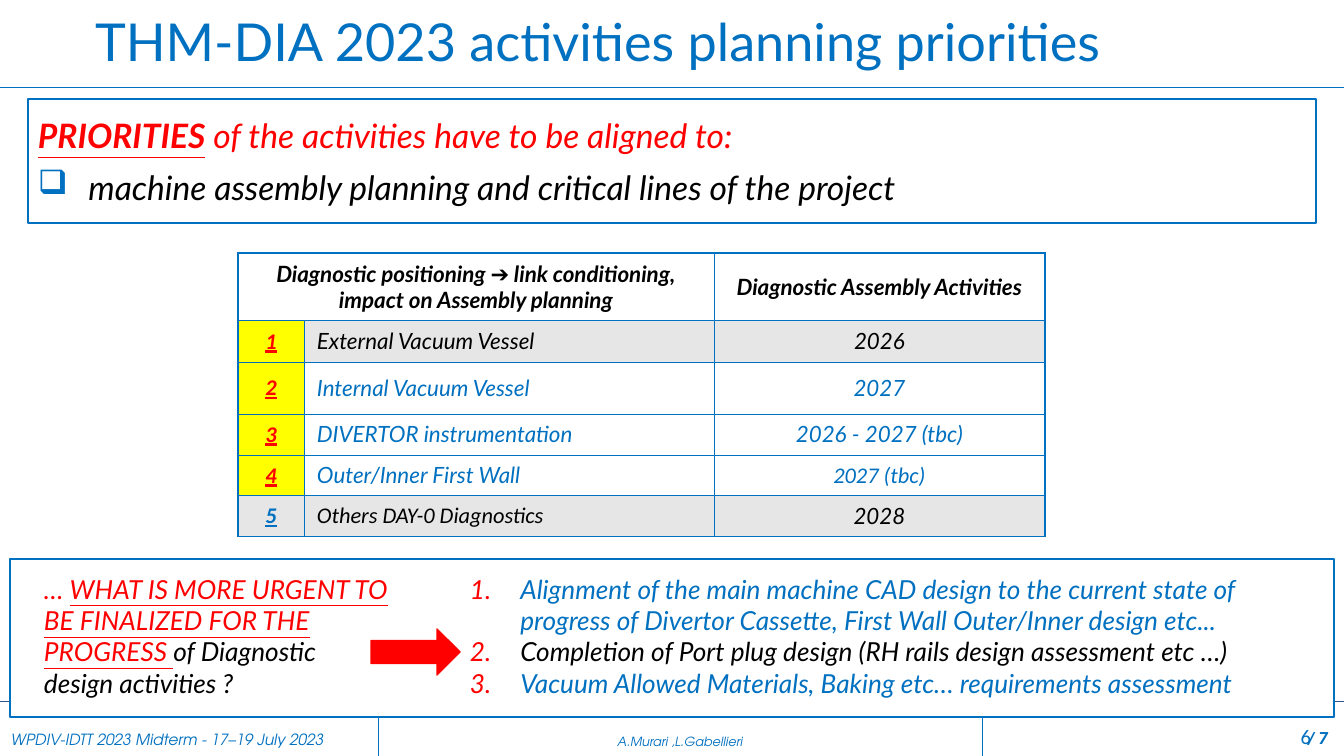
"""Build the slide on activities planning priorities."""
import pptx
import pptx.dml.color
import pptx.enum.shapes
import pptx.enum.text
import pptx.oxml.ns
import pptx.util
from lxml import etree

ALIGN = pptx.enum.text.PP_ALIGN
ANCHOR = pptx.enum.text.MSO_ANCHOR
SHAPE = pptx.enum.shapes.MSO_SHAPE


class Theme:
    blue, navy, red, black = "0070C0", "2F5597", "FF0000", "000000"
    white, grey, yellow = "FFFFFF", "E7E6E6", "FFFF00"
    main, digits, footer, total = "Lato", "Calibri", "TeX Gyre Adventor", "Roboto"
    title_size, lead_size, body_size, table_size = 37.3, 24, 18.7, 16
    number_size, total_size, footer_size, author_size = 14.7, 12, 11, 9
    thin, rule, thick = 0.25, 0.5, 1


def px(value):
    return pptx.util.Emu(round(value * 914400 / 100.8))


def rgb(value):
    return pptx.dml.color.RGBColor.from_string(value)


def style(size, color, name=Theme.main, **extra):
    return {"size": pptx.util.Pt(size), "name": name, "color": color, **extra}


def add_node(parent, tag, **attributes):
    return etree.SubElement(parent, pptx.oxml.ns.qn("a:" + tag), attributes)


def apply(target, values):
    for key, value in values.items():
        if key == "color":
            target.color.rgb = rgb(value)
        else:
            setattr(target, key, value)


class SlideBuilder:
    def __init__(self, slide, theme):
        self.slide, self.theme = slide, theme

    def fill_text(self, frame, paragraphs):
        for index, (runs, options) in enumerate(paragraphs):
            paragraph = frame.add_paragraph() if index else frame.paragraphs[0]
            options = {"alignment": ALIGN.LEFT, **options}
            bullet = options.pop("bullet", None)
            if bullet:
                self.bullet(paragraph, *bullet)
            apply(paragraph, options)
            for text, font_values in runs:
                run = paragraph.add_run()
                run.text = text
                apply(run.font, font_values)

    def bullet(self, paragraph, color, tag, attributes):
        properties = paragraph._p.get_or_add_pPr()
        indent = pptx.util.Inches(0.5)
        properties.set("marL", str(indent))
        properties.set("indent", str(-indent))
        add_node(add_node(properties, "buClr"), "srgbClr", val=color)
        add_node(properties, tag, **attributes)

    def title(self, box, paragraphs):
        shape = self.slide.shapes.title
        apply(shape, dict(zip(("left", "top", "width", "height"), map(px, box))))
        apply(shape.text_frame, {"auto_size": pptx.enum.text.MSO_AUTO_SIZE.NONE,
                                 "vertical_anchor": ANCHOR.MIDDLE})
        self.fill_text(shape.text_frame, paragraphs)

    def line(self, y, color):
        connector = self.slide.shapes.add_connector(
            pptx.enum.shapes.MSO_CONNECTOR.STRAIGHT, 0, px(y), px(1344), px(y))
        apply(connector.line, {"color": color, "width": pptx.util.Pt(self.theme.rule)})
        add_node(connector._element.spPr, "effectLst")

    def text(self, box, paragraphs):
        frame = self.slide.shapes.add_textbox(*map(px, box)).text_frame
        frame.word_wrap = True
        self.fill_text(frame, paragraphs)

    def shape(self, kind, box, fill, line=None, paragraphs=(), anchor=ANCHOR.TOP):
        shape = self.slide.shapes.add_shape(kind, *map(px, box))
        shape.shadow.inherit = False
        shape.fill.solid()
        shape.fill.fore_color.rgb = rgb(fill)
        if line:
            apply(shape.line, {"color": line, "width": pptx.util.Pt(self.theme.thick)})
        else:
            shape.line.fill.background()
        apply(shape.text_frame, {"word_wrap": True, "vertical_anchor": anchor})
        self.fill_text(shape.text_frame, paragraphs)

    def table(self, left, top, columns, rows):
        box = left, top, sum(columns), sum(rows)
        table = self.slide.shapes.add_table(len(rows), len(columns), *map(px, box)).table
        table.first_row = table.horz_banding = False
        for column, width in zip(table.columns, columns):
            column.width = px(width)
        for row, height in zip(table.rows, rows):
            row.height = px(height)
        return table

    def cell(self, cell, fill, borders, anchor, text, font, alignment):
        apply(cell, {"margin_left": px(13), "margin_right": px(13), "margin_top": px(7),
                     "margin_bottom": px(7), "vertical_anchor": anchor})
        properties = cell._tc.get_or_add_tcPr()
        for side, width in zip("LRTB", borders):
            edge = add_node(properties, "ln" + side, w=str(pptx.util.Pt(width)))
            if width:
                add_node(add_node(edge, "solidFill"), "srgbClr", val=self.theme.blue)
            else:
                add_node(edge, "noFill")
        if fill:
            cell.fill.solid()
            cell.fill.fore_color.rgb = rgb(fill)
        else:
            cell.fill.background()
        runs = [(text, font)] if text else []
        self.fill_text(cell.text_frame, [(runs, {"alignment": alignment})])


def add_footer(builder, theme):
    cells = [("WPDIV-IDTT 2023 Midterm - 17–19 July 2023", ALIGN.LEFT,
              style(theme.footer_size, theme.blue, theme.footer, italic=True)),
             ("A.Murari ,L.Gabellieri", ALIGN.CENTER,
              style(theme.author_size, theme.blue, theme.footer, italic=True)),
             ("/ 7", ALIGN.RIGHT,
              style(theme.total_size, theme.blue, theme.total, bold=True, italic=True))]
    table = builder.table(-2, 702, [380, 604, 359], [54])
    for column, (text, alignment, font) in enumerate(cells):
        borders = (theme.thin * (column > 0), theme.thin * (column < 2), 0, 0)
        builder.cell(table.cell(0, column), None, borders, ANCHOR.BOTTOM,
                     text, font, alignment)
    number = ("6", style(theme.number_size, theme.blue, theme.digits))
    builder.text((1019, 719, 302, 40), [([number], {"alignment": ALIGN.RIGHT})])


def add_schedule(builder, theme):
    heading = style(theme.table_size, theme.black, bold=True, italic=True)
    titles = ["Diagnostic positioning ➔ link conditioning, impact on Assembly planning",
              "", "Diagnostic Assembly Activities"]
    grid = [[(title, heading, theme.white) for title in titles]]
    rows = [("External Vacuum Vessel", "2026", theme.black, theme.grey),
            ("Internal Vacuum Vessel", "2027", theme.blue, theme.white),
            ("DIVERTOR instrumentation", "2026 - 2027 (tbc)", theme.blue, theme.white),
            ("Outer/Inner First Wall", "2027 (tbc)", theme.blue, theme.white),
            ("Others DAY-0 Diagnostics", "2028", theme.black, theme.grey)]
    for number, (name, year, color, fill) in enumerate(rows, 1):
        last = number == len(rows)
        rank = style(theme.table_size, theme.blue if last else theme.red,
                     theme.digits, bold=True, italic=True, underline=True)
        plain = style(theme.table_size, color, italic=True)
        digits = {**plain, "name": theme.digits}
        grid.append([(str(number), rank, fill if last else theme.yellow),
                     (name, digits if last else plain, fill),
                     (year, digits if number == 4 else plain, fill)])
    table = builder.table(238, 253, [66, 410, 331], [67, 41, 52, 41, 40, 40])
    table.cell(0, 0).merge(table.cell(0, 1))
    for row, values in enumerate(grid):
        for column, (text, font, fill) in enumerate(values):
            outer = (column == 0, column == 2, row < 2, row in (0, 5))
            borders = [theme.thick if edge else theme.thin for edge in outer]
            builder.cell(table.cell(row, column), fill, borders, ANCHOR.MIDDLE, text, font,
                         ALIGN.LEFT if row and column == 1 else ALIGN.CENTER)


def add_urgent(builder, theme):
    red, black, blue = (style(theme.body_size, color, italic=True)
                        for color in (theme.red, theme.black, theme.blue))
    question = [("… ", red), ("WHAT IS MORE URGENT TO BE FINALIZED FOR THE PROGRESS ",
                              {**red, "underline": True}),
                ("of Diagnostic design activities ?", black)]
    answers = [("Alignment of the main machine CAD design to the current state of progress "
                "of Divertor Cassette, First Wall Outer/Inner design etc...", blue),
               ("Completion of Port plug design (RH rails design assessment etc …)", black),
               ("Vacuum Allowed Materials, Baking etc… requirements assessment", blue)]
    numbered = {"bullet": (theme.red, "buAutoNum", {"type": "arabicPeriod"})}
    builder.shape(SHAPE.RECTANGLE, (10, 559, 1324, 158), theme.white, theme.blue)
    for box, paragraphs in (((34, 568, 365, 137), [(question, {})]),
                            ((460, 568, 858, 137), [([item], numbered) for item in answers])):
        builder.shape(SHAPE.RECTANGLE, box, theme.white, paragraphs=paragraphs)
    builder.shape(SHAPE.RIGHT_ARROW, (371, 629, 89, 46), theme.red, theme.red)


def main():
    theme = Theme()
    presentation = pptx.Presentation()
    apply(presentation, {"slide_width": px(1344), "slide_height": px(756)})
    builder = SlideBuilder(presentation.slides.add_slide(presentation.slide_layouts[5]), theme)
    builder.line(87, theme.blue)
    builder.line(701, theme.navy)
    heading = ("THM-DIA 2023 activities planning priorities", style(theme.title_size, theme.blue))
    builder.title((85, 11, 1067, 67), [([heading], {"line_spacing": 0.9})])
    add_footer(builder, theme)
    lead = style(theme.lead_size, theme.red, italic=True)
    aligned = [("PRIORITIES", {**lead, "bold": True, "underline": True}),
               (" of the activities have to be aligned to:", lead)]
    planning = ("machine assembly planning and critical lines of the project",
                {**lead, "color": theme.black})
    builder.shape(SHAPE.RECTANGLE, (28, 99, 1288, 124), theme.white, theme.blue, [
        (aligned, {"space_after": pptx.util.Pt(8)}),
        ([planning], {"bullet": (theme.blue, "buChar", {"char": "❑"})})], ANCHOR.MIDDLE)
    add_urgent(builder, theme)
    add_schedule(builder, theme)
    presentation.save("out.pptx")


if __name__ == "__main__":
    main()
